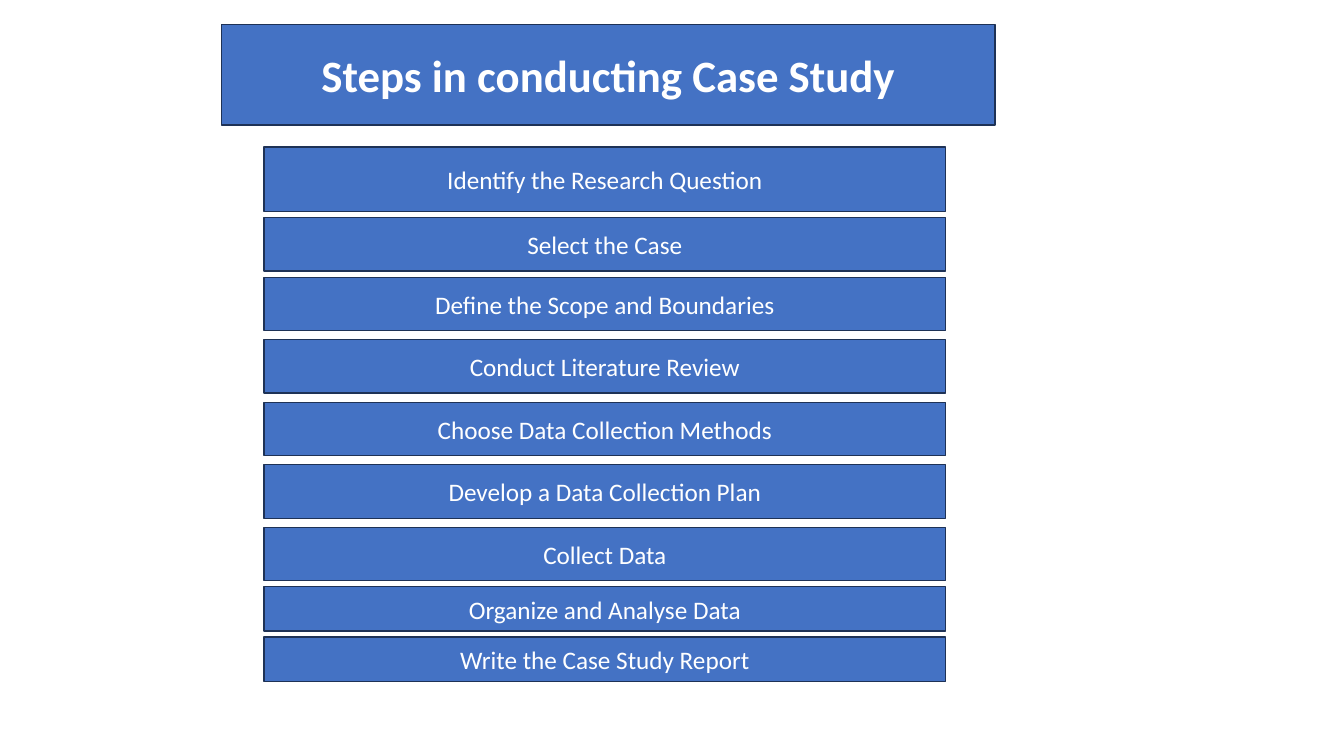
"""Build a slide that lists the steps of a case study as stacked bars."""
from dataclasses import dataclass

from pptx import Presentation
from pptx.dml.color import RGBColor
from pptx.enum.shapes import MSO_SHAPE
from pptx.enum.text import MSO_ANCHOR, MSO_AUTO_SIZE, PP_ALIGN
from pptx.shapes.autoshape import Shape
from pptx.util import Inches, Pt

COLORS = {"bar": "4472C4", "outline": "1E3256", "text": "FFFFFF"}
FONT = "Calibri"
SLIDE_WIDTH = Inches(13.33)
SLIDE_HEIGHT = Inches(7.5)

STEPS_LEFT, STEPS_TOP, STEPS_WIDTH = 19.65, 19.47, 50.71
TALL, MEDIUM, SHORT = 8.53, 7.07, 5.87
NARROW_GAP, WIDE_GAP = 0.8, 1.2


@dataclass(frozen=True)
class Area:
    """Hold a position and size in percent of the slide."""
    left: float
    top: float
    width: float
    height: float


@dataclass(frozen=True)
class Step:
    """Hold a step's wording, bar height and the gap below it."""
    wording: str
    height: float = MEDIUM
    gap: float = WIDE_GAP


HEADING_AREA = Area(16.5, 3.2, 57.54, 13.33)
STEPS = (
    Step("Identify the Research Question", TALL, NARROW_GAP),
    Step("Select the Case", gap=NARROW_GAP),
    Step("Define the Scope and Boundaries"),
    Step("Conduct Literature Review"),
    Step("Choose Data Collection Methods"),
    Step("Develop a Data Collection Plan"),
    Step("Collect Data", gap=NARROW_GAP),
    Step("Organize and Analyse Data", SHORT, NARROW_GAP),
    Step("Write the Case Study Report", SHORT, NARROW_GAP),
)


def color(name: str) -> RGBColor:
    """Return a named colour."""
    return RGBColor.from_string(COLORS[name])


def place(bar: Shape, area: Area) -> None:
    """Move and size a bar."""
    bar.left = round(SLIDE_WIDTH * area.left / 100)
    bar.top = round(SLIDE_HEIGHT * area.top / 100)
    bar.width = round(SLIDE_WIDTH * area.width / 100)
    bar.height = round(SLIDE_HEIGHT * area.height / 100)


def format_bar(bar: Shape, wording: str, size: int, bold: bool = False) -> None:
    """Give a bar its fill, outline and centred wording."""
    bar.fill.solid()
    bar.fill.fore_color.rgb = color("bar")
    bar.line.color.rgb = color("outline")
    bar.line.width = Pt(1)
    frame = bar.text_frame
    frame.text = wording
    frame.word_wrap = True
    frame.auto_size = MSO_AUTO_SIZE.NONE
    frame.vertical_anchor = MSO_ANCHOR.MIDDLE
    paragraph = frame.paragraphs[0]
    paragraph.alignment = PP_ALIGN.CENTER
    font = paragraph.runs[0].font
    font.name = FONT
    font.size = Pt(size)
    font.bold = bold
    font.color.rgb = color("text")


def main() -> None:
    """Create and save the slide."""
    presentation = Presentation()
    presentation.slide_width = SLIDE_WIDTH
    presentation.slide_height = SLIDE_HEIGHT
    slide = presentation.slides.add_slide(presentation.slide_layouts[5])

    heading = slide.shapes.title
    place(heading, HEADING_AREA)
    format_bar(heading, "Steps in conducting Case Study", 32, bold=True)

    top = STEPS_TOP
    for step in STEPS:
        bar = slide.shapes.add_shape(MSO_SHAPE.RECTANGLE, 0, 0, 0, 0)
        bar.shadow.inherit = False
        place(bar, Area(STEPS_LEFT, top, STEPS_WIDTH, step.height))
        format_bar(bar, step.wording, 18)
        top += step.height + step.gap

    presentation.save("out.pptx")


if __name__ == "__main__":
    main()
